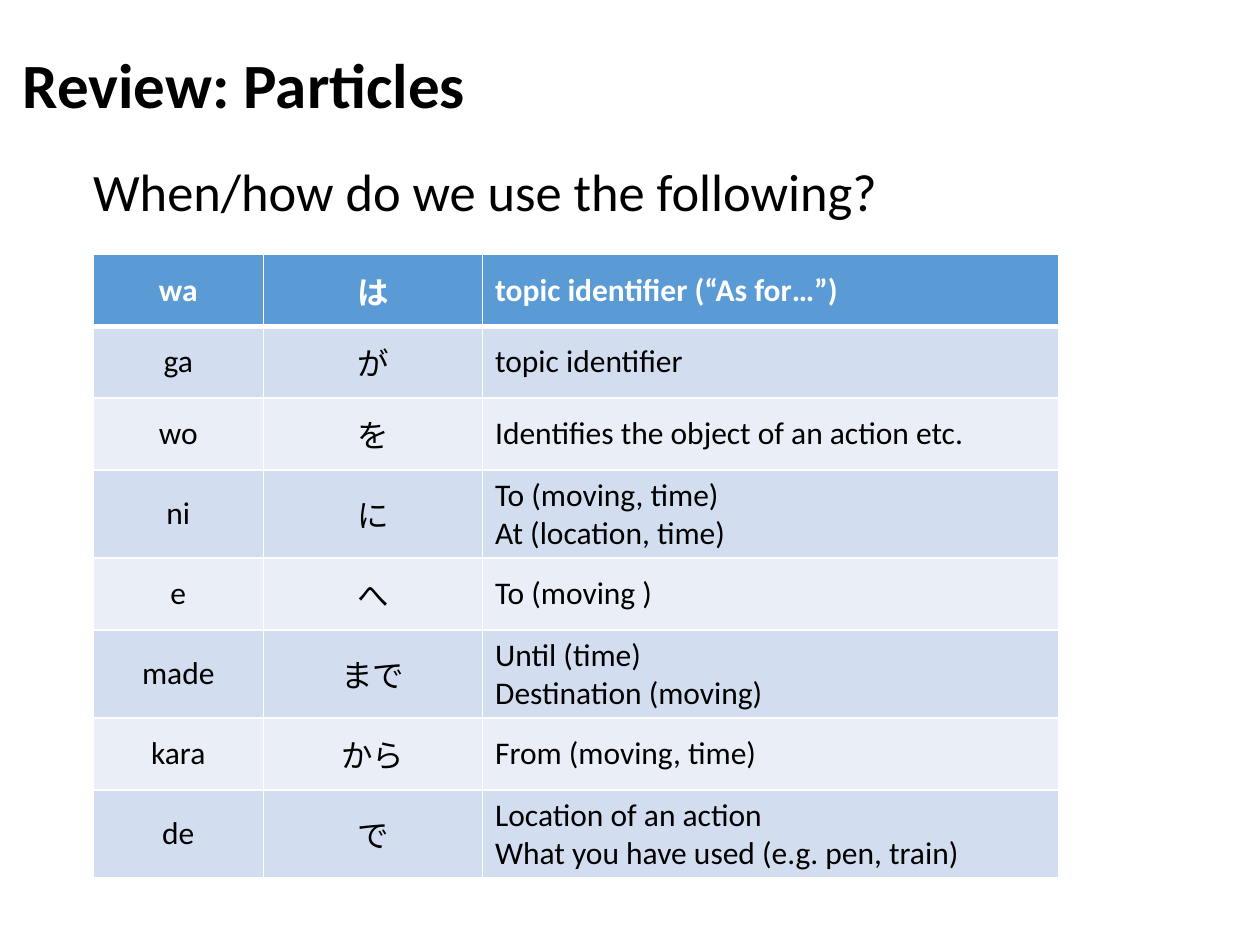
from lxml import etree
from pptx import Presentation
from pptx import util as u
from pptx.dml import color
from pptx.enum import text
from pptx.oxml import ns

PARTICLES = [
    ("wa", "は", ["topic identifier (“As for…”)"]),
    ("ga", "が", ["topic identifier"]),
    ("wo", "を", ["Identifies the object of an action etc."]),
    ("ni", "に", ["To (moving, time)", "At (location, time)"]),
    ("e", "へ", ["To (moving )"]),
    ("made", "まで", ["Until (time)", "Destination (moving)"]),
    ("kara", "から", ["From (moving, time)"]),
    ("de", "で", ["Location of an action", "What you have used (e.g. pen, train)"]),
]


def rgb(value):
    return color.RGBColor.from_string(value)


class Deck:
    font = "Calibri"
    ink = "000000"
    white = "FFFFFF"
    header = "5B9BD5"
    bands = ("D2DEEF", "EAEFF7")

    def __init__(self, prs):
        self.s = prs.slides.add_slide(prs.slide_layouts[5])

    def add_lines(self, tf, lines, size, ink=ink, bold=False, align=text.PP_ALIGN.LEFT):
        for i, line in enumerate(lines):
            p = tf.add_paragraph() if i else tf.paragraphs[0]
            p.alignment = align
            r = p.add_run()
            r.text = line
            r.font.name = self.font
            r.font.size = u.Pt(size)
            r.font.bold = bold
            r.font.color.rgb = rgb(ink)

    def title(self, line, left, top, width, height):
        sp = self.s.shapes.title
        sp.left, sp.top = u.Inches(left), u.Inches(top)
        sp.width, sp.height = u.Inches(width), u.Inches(height)
        sp.text_frame.vertical_anchor = text.MSO_ANCHOR.TOP
        self.add_lines(sp.text_frame, [line], 36, bold=True)

    def question(self, line, left, top, width, height):
        sp = self.s.shapes.add_textbox(*map(u.Inches, (left, top, width, height)))
        sp.text_frame.word_wrap = False
        self.add_lines(sp.text_frame, [line], 30)

    def borders(self, cell, row):
        tc_pr = cell._tc.get_or_add_tcPr()
        widths = {"L": 1, "R": 1, "T": 3 if row == 1 else 1, "B": 3 if row == 0 else 1}
        for side, points in widths.items():
            ln = etree.SubElement(tc_pr, ns.qn(f"a:ln{side}"), w=str(u.Pt(points)))
            fill = etree.SubElement(ln, ns.qn("a:solidFill"))
            etree.SubElement(fill, ns.qn("a:srgbClr"), val=self.white)

    def table(self, rows, left, top, widths, row_height):
        frame = self.s.shapes.add_table(
            len(rows), len(widths), u.Inches(left), u.Inches(top),
            u.Inches(sum(widths)), u.Inches(row_height * len(rows)))
        table = frame.table
        for column, width in zip(table.columns, widths):
            column.width = u.Inches(width)
        for i, (romaji, kana, uses) in enumerate(rows):
            table.rows[i].height = u.Inches(row_height)
            for j, lines in enumerate(([romaji], [kana], uses)):
                cell = table.cell(i, j)
                self.borders(cell, i)
                cell.fill.solid()
                cell.fill.fore_color.rgb = rgb(self.bands[(i - 1) % 2] if i else self.header)
                cell.vertical_anchor = text.MSO_ANCHOR.MIDDLE
                self.add_lines(cell.text_frame, lines, 18,
                               ink=self.ink if i else self.white, bold=i == 0,
                               align=text.PP_ALIGN.CENTER if j < 2 else text.PP_ALIGN.LEFT)


def main():
    prs = Presentation()
    prs.slide_width, prs.slide_height = u.Inches(10), u.Inches(7.5)
    deck = Deck(prs)
    deck.title("Review: Particles", 0.08, 0.31, 8.55, 0.71)
    deck.question("When/how do we use the following?", 0.64, 1.21, 6.49, 0.61)
    deck.table(PARTICLES, 0.74, 2.02, (1.35, 1.74, 4.57), 0.57)
    prs.save("out.pptx")


if __name__ == "__main__":
    main()
